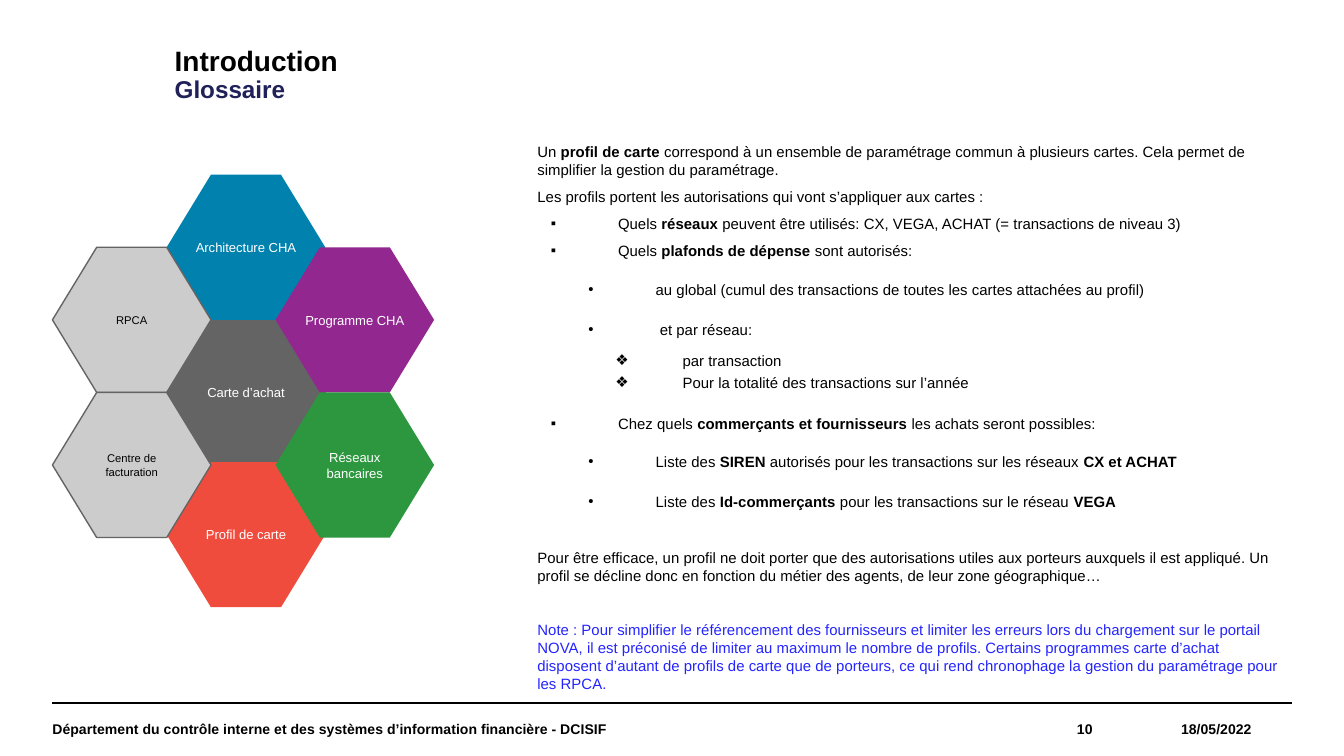
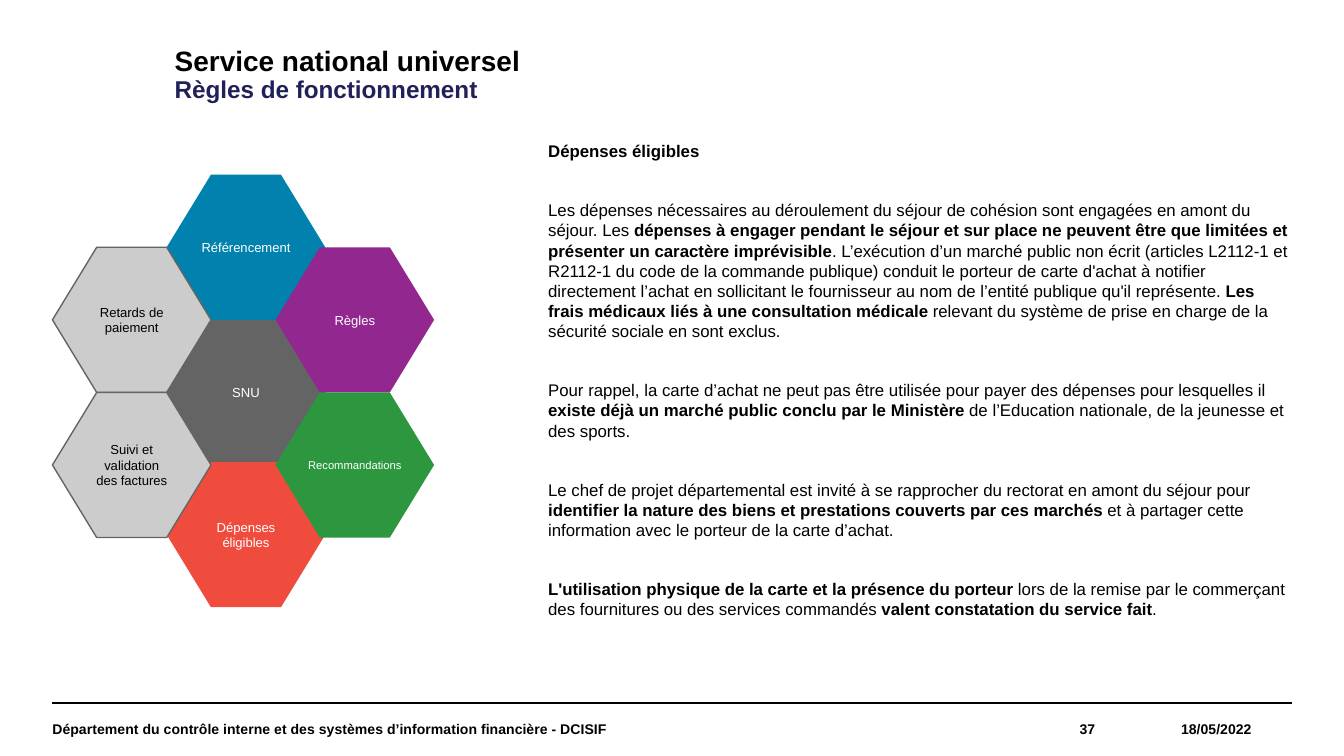
from dataclasses import dataclass

from lxml import etree
from pptx import Presentation
from pptx.dml.color import RGBColor
from pptx.enum.shapes import MSO_CONNECTOR, MSO_SHAPE
from pptx.enum.text import MSO_ANCHOR, MSO_AUTO_SIZE, PP_ALIGN
from pptx.oxml.ns import qn
from pptx.util import Pt

HEXAGON = MSO_SHAPE.HEXAGON
STRAIGHT = MSO_CONNECTOR.STRAIGHT
TOP, MIDDLE = MSO_ANCHOR.TOP, MSO_ANCHOR.MIDDLE
LEFT, CENTER, RIGHT = PP_ALIGN.LEFT, PP_ALIGN.CENTER, PP_ALIGN.RIGHT
NO_FIT, GROW = MSO_AUTO_SIZE.NONE, MSO_AUTO_SIZE.SHAPE_TO_FIT_TEXT
TITLE_ONLY = 5


@dataclass(frozen=True)
class Theme:
    font: str = "Arial"
    black: str = "000000"
    white: str = "FFFFFF"
    navy: str = "21215A"
    note: str = "2424FF"
    dark: str = "646464"
    light: str = "CCCCCC"
    red: str = "F04C3E"
    blue: str = "0081AE"
    purple: str = "91278F"
    green: str = "2C973E"
    title: float = 15
    subtitle: float = 13
    footer: float = 7.5
    hexagon: float = 7
    hexagon_small: float = 6


T = Theme()


@dataclass(frozen=True)
class Style:
    level: int = 0
    margin: float = 0
    before: float = 0
    after: float = 5
    bullet: str = ""
    color: str = T.black


PLAIN = Style()
NOTE = Style(color=T.note)
SQUARE = Style(margin=43.2, bullet="▪")
DOT = Style(level=1, margin=63.36, before=6, after=6, bullet="•")
DIAMOND = Style(level=2, margin=77.76, before=1, after=1, bullet="❖")
HANGING = -36

SLIDE_W, SLIDE_H = 720, 405
TITLE_BOX = (93.6, 12.24, 558, 56.88)
FOOTER_BOX = (28.08, 376.56, 663.84, 28.08)
HEX_ORIGIN = (28.08, 93.6)

HEX_W, HEX_H = 84.96, 77.76
HEX_COLUMNS = (0, 61.2, 119.52)
HEX_ROW_STEP = HEX_H / 2
# column, row (in half heights), fill, outlined, text colour
HEX_CELLS = [
    (1, 2, T.dark, True, T.white),
    (1, 3.96, T.red, False, T.white),
    (1, 0, T.blue, False, T.white),
    (2, 1, T.purple, False, T.white),
    (2, 3, T.green, False, T.white),
    (0, 1, T.light, True, T.black),
    (0, 3, T.light, True, T.black),
]

DEPARTMENT = ("Département du contrôle interne et des systèmes "
              "d’information financière - DCISIF")
DATE = "18/05/2022"

GLOSSARY = [
    (PLAIN, "Un **profil de carte **correspond à un ensemble de paramétrage commun à "
            "plusieurs cartes. Cela permet de simplifier la gestion du paramétrage.", 0),
    (PLAIN, "Les profils portent les autorisations qui vont s’appliquer aux cartes :", 0),
    (SQUARE, "Quels **réseaux** peuvent être utilisés: CX, VEGA, ACHAT "
             "(= transactions de niveau 3)", 0),
    (SQUARE, "Quels **plafonds de dépense **sont autorisés:", 0),
    (DOT, "au global (cumul des transactions de toutes les cartes attachées au profil)", 0),
    (DOT, " et par réseau:", 0),
    (DIAMOND, "par transaction", 0),
    (DIAMOND, "Pour la totalité des transactions sur l’année", 0),
    (SQUARE, "Chez quels **commerçants et fournisseurs **les achats seront possibles:", 11.4),
    (DOT, "Liste des **SIREN** autorisés pour les transactions sur les réseaux "
          "**CX et ACHAT**", 0),
    (DOT, "Liste des **Id-commerçants** pour les transactions sur le réseau **VEGA**", 0),
    (PLAIN, "Pour être efficace, un profil ne doit porter que des autorisations utiles aux "
            "porteurs auxquels il est appliqué. Un profil se décline donc en fonction du "
            "métier des agents, de leur zone géographique…", 14.4),
    (NOTE, "Note : Pour simplifier le référencement des fournisseurs et limiter les erreurs "
           "lors du chargement sur le portail NOVA, il est préconisé de limiter au maximum "
           "le nombre de profils. Certains programmes carte d’achat disposent d’autant de "
           "profils de carte que de porteurs, ce qui rend chronophage la gestion du "
           "paramétrage pour les RPCA.", 14.4),
]

RULES_GAP = 15.7
RULES = [
    (PLAIN, "**Dépenses éligibles**", 0),
    (PLAIN, "Les dépenses nécessaires au déroulement du séjour de cohésion sont engagées en "
            "amont du séjour. Les **dépenses à engager pendant le séjour et sur place ne "
            "peuvent être que limitées et présenter un caractère imprévisible**. L’exécution "
            "d’un marché public non écrit (articles L2112-1 et R2112-1 du code de la commande "
            "publique) conduit le porteur de carte d'achat à notifier directement l’achat en "
            "sollicitant le fournisseur au nom de l’entité publique qu'il représente.** Les "
            "frais médicaux liés à une consultation médicale** relevant du système de prise "
            "en charge de la sécurité sociale en sont exclus.", RULES_GAP),
    (PLAIN, "Pour rappel, la carte d’achat ne peut pas être utilisée pour payer des dépenses "
            "pour lesquelles il **existe déjà un marché public conclu par le Ministère** de "
            "l’Education nationale, de la jeunesse et des sports.", RULES_GAP),
    (PLAIN, "Le chef de projet départemental est invité à se rapprocher du rectorat en amont "
            "du séjour pour **identifier la nature des biens et prestations couverts par ces "
            "marchés **et à partager cette information avec le porteur de la carte d’achat.",
     RULES_GAP),
    (PLAIN, "**L'utilisation physique de la carte et la présence du porteur **lors de la "
            "remise par le commerçant des fournitures ou des services commandés **valent "
            "constatation du service fait**.", RULES_GAP),
]

SLIDES = [
    dict(title="Introduction", subtitle="Glossaire", page="10", page_right=585.36,
         labels=["Carte d’achat", "Profil de carte", "Architecture CHA", "Programme CHA",
                 "Réseaux bancaires", "RPCA", "Centre de facturation"],
         small_labels={"RPCA", "Centre de facturation"},
         body=GLOSSARY, body_box=(280.8, 72.72, 414, 306), body_size=8),
    dict(title="Service national universel", subtitle="Règles de fonctionnement",
         page="37", page_right=586.8,
         labels=["SNU", "Dépenses éligibles", "Référencement", "Règles",
                 "Recommandations", "Retards de paiement",
                 "Suivi et validation des factures"],
         small_labels={"Recommandations"},
         body=RULES, body_box=(286.56, 72, 414, 265.68), body_size=9),
]


def rgb(color):
    return RGBColor.from_string(color)


def add_run(p, text, size, color=T.black, bold=False):
    r = p.add_run()
    r.text = text
    r.font.name = T.font
    r.font.size = Pt(size)
    r.font.bold = bold
    r.font.color.rgb = rgb(color)


def set_frame(tf, anchor=MIDDLE, inset=(0, 0), wrap=True, fit=NO_FIT):
    tf.margin_left = tf.margin_right = Pt(inset[0])
    tf.margin_top = tf.margin_bottom = Pt(inset[1])
    tf.vertical_anchor = anchor
    tf.word_wrap = wrap
    tf.auto_size = fit


def add_text_box(slide, box, **frame):
    sp = slide.shapes.add_textbox(*map(Pt, box))
    set_frame(sp.text_frame, **frame)
    return sp.text_frame


def add_title(slide, box, title, subtitle):
    sp = slide.shapes.title
    sp.left, sp.top, sp.width, sp.height = map(Pt, box)
    tf = sp.text_frame
    set_frame(tf)
    lines = [(title, T.title, T.black), (subtitle, T.subtitle, T.navy)]
    for i, (text, size, color) in enumerate(lines):
        p = tf.add_paragraph() if i else tf.paragraphs[0]
        p.alignment = LEFT
        p.line_spacing = 0.9
        p.space_before = Pt(0)
        add_run(p, text, size, color, True)


def add_footer(slide, box, page, page_right):
    left, top, width, height = box
    rule = slide.shapes.add_connector(STRAIGHT, Pt(left), Pt(top), Pt(left + width), Pt(top))
    rule.line.color.rgb = rgb(T.black)
    rule.line.width = Pt(0.8)
    etree.SubElement(rule._element.spPr, qn("a:effectLst"))

    page_w, date_w = 92, 51.84
    date_left = left + width - date_w - 14.4
    parts = [
        (DEPARTMENT, LEFT, (left, top, 465, height), {}),
        (page, RIGHT, (page_right - page_w, top + 3.6, page_w, 20.88), {}),
        (DATE, CENTER, (date_left, top + 6, date_w, 16.56),
         dict(anchor=TOP, inset=(0, 3.6), wrap=False)),
    ]
    for text, align, part_box, frame in parts:
        p = add_text_box(slide, part_box, **frame).paragraphs[0]
        p.alignment = align
        add_run(p, text, T.footer, bold=True)


def add_honeycomb(slide, origin, labels, small_labels):
    left, top = origin
    for (col, row, fill, outlined, color), label in zip(HEX_CELLS, labels):
        sp = slide.shapes.add_shape(HEXAGON, Pt(left + HEX_COLUMNS[col]),
                                    Pt(top + row * HEX_ROW_STEP), Pt(HEX_W), Pt(HEX_H))
        sp.adjustments[0] = 0.305
        sp.shadow.inherit = False
        sp.fill.solid()
        sp.fill.fore_color.rgb = rgb(fill)
        if outlined:
            sp.line.color.rgb = rgb(T.dark)
            sp.line.width = Pt(0.75)
        else:
            sp.line.fill.background()
        set_frame(sp.text_frame, inset=(7.2, 3.6) if outlined else (0, 0),
                  wrap=fill != T.dark)
        p = sp.text_frame.paragraphs[0]
        p.alignment = CENTER
        size = T.hexagon_small if label in small_labels else T.hexagon
        add_run(p, label, size, color)


def set_bullet(p, style):
    pPr = p._p.get_or_add_pPr()
    pPr.set("marL", str(Pt(style.margin)))
    pPr.set("indent", str(Pt(HANGING)))
    etree.SubElement(pPr, qn("a:buFont")).set("typeface", T.font)
    etree.SubElement(pPr, qn("a:buChar")).set("char", style.bullet)


def add_body(slide, box, paragraphs, size):
    """Write (style, text, extra gap) paragraphs; ** switches bold on and off."""
    tf = add_text_box(slide, box, anchor=TOP, inset=(7.2, 3.6), fit=GROW)
    for i, (style, text, gap) in enumerate(paragraphs):
        p = tf.add_paragraph() if i else tf.paragraphs[0]
        p.level = style.level
        if style.bullet:
            set_bullet(p, style)
        if i:
            p.space_before = Pt(style.before + gap)
        p.space_after = Pt(style.after)
        for j, part in enumerate(text.split("**")):
            if part:
                add_run(p, part, size, style.color, j % 2 == 1)


def add_slide(prs, content):
    slide = prs.slides.add_slide(prs.slide_layouts[TITLE_ONLY])
    add_title(slide, TITLE_BOX, content["title"], content["subtitle"])
    add_honeycomb(slide, HEX_ORIGIN, content["labels"], content["small_labels"])
    add_body(slide, content["body_box"], content["body"], content["body_size"])
    add_footer(slide, FOOTER_BOX, content["page"], content["page_right"])


def main():
    prs = Presentation()
    prs.slide_width, prs.slide_height = Pt(SLIDE_W), Pt(SLIDE_H)
    for content in SLIDES:
        add_slide(prs, content)
    prs.save("out.pptx")


if __name__ == "__main__":
    main()
